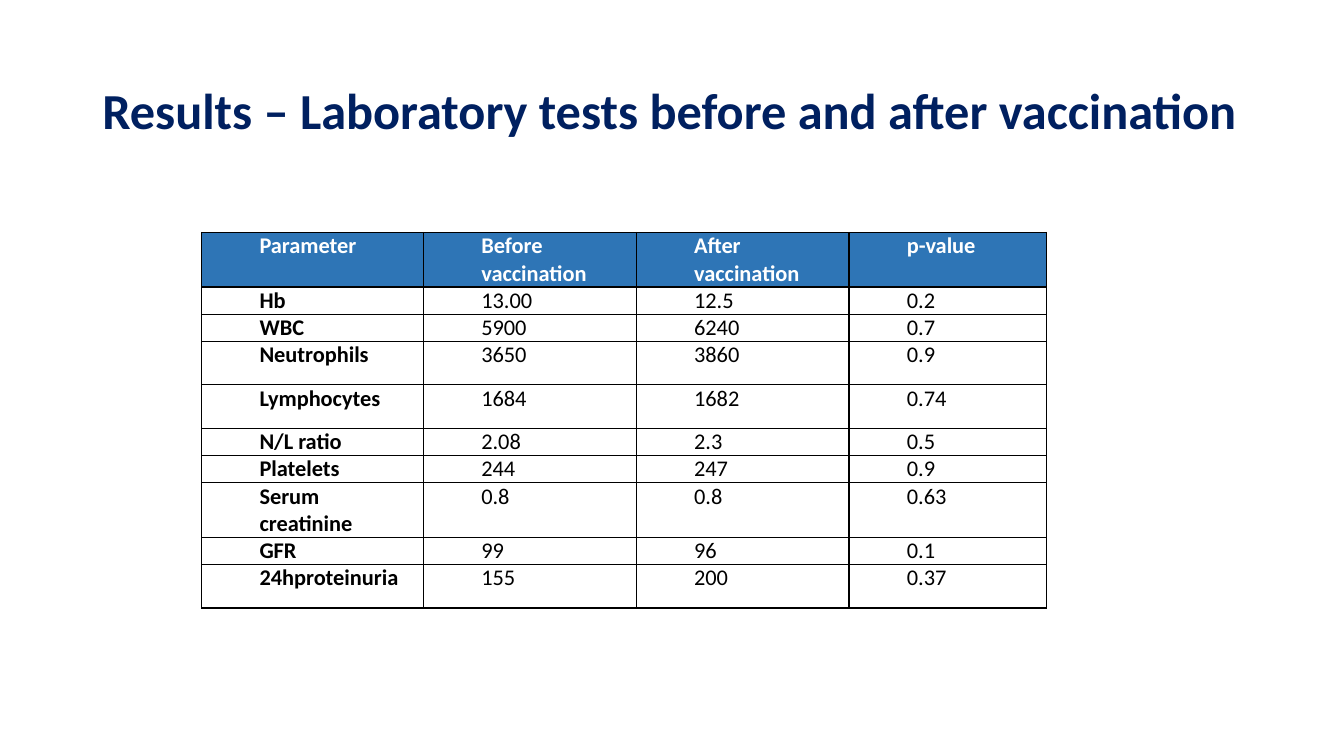
from lxml.etree import SubElement
from pptx import Presentation
from pptx.dml.color import RGBColor
from pptx.enum.text import MSO_ANCHOR
from pptx.oxml.ns import qn
from pptx.util import Pt

NAVY = RGBColor(0x00, 0x20, 0x60)
BLUE = RGBColor(0x2E, 0x75, 0xB6)
WHITE = RGBColor(0xFF, 0xFF, 0xFF)
BLACK = RGBColor(0x00, 0x00, 0x00)

COLUMNS = [158.4, 152, 152, 141]
SINGLE, SPACED, DOUBLE = 19.5, 31, 39  # row heights

# Each row: height, then its cells
ROWS = [
    (DOUBLE, "Parameter", "Before vaccination", "After vaccination", "p-value"),
    (SINGLE, "Hb", "13.00", "12.5", "0.2"),
    (SINGLE, "WBC", "5900", "6240", "0.7"),
    (SPACED, "Neutrophils", "3650", "3860", "0.9"),
    (SPACED, "Lymphocytes", "1684", "1682", "0.74"),
    (SINGLE, "N/L ratio", "2.08", "2.3", "0.5"),
    (SINGLE, "Platelets", "244", "247", "0.9"),
    (DOUBLE, "Serum creatinine", "0.8", "0.8", "0.63"),
    (SINGLE, "GFR", "99", "96", "0.1"),
    (SPACED, "24hproteinuria", "155", "200", "0.37"),
]


class SlideBuilder:
    font = "Calibri"
    title_size = 36
    table_size = 16

    def __init__(self, s):
        self.s = s

    def format_runs(self, p, size, color, bold):
        for r in p.runs:
            r.font.name = self.font
            r.font.size = Pt(size)
            r.font.bold = bold
            r.font.color.rgb = color

    def title(self, text, left, top, width, height):
        tf = self.s.shapes.add_textbox(Pt(left), Pt(top), Pt(width), Pt(height)).text_frame
        tf.word_wrap = True
        tf.vertical_anchor = MSO_ANCHOR.MIDDLE
        tf.text = text
        p = tf.paragraphs[0]
        p.line_spacing = 0.9
        self.format_runs(p, self.title_size, NAVY, True)

    def borders(self, cell):
        tc_pr = cell._tc.get_or_add_tcPr()
        for side in ("a:lnL", "a:lnR", "a:lnT", "a:lnB"):
            ln = SubElement(tc_pr, qn(side), w=str(Pt(1)))
            fill = SubElement(ln, qn("a:solidFill"))
            SubElement(fill, qn("a:srgbClr"), val=str(BLACK))

    def cell(self, cell, text, header, bold):
        cell.margin_left = cell.margin_right = Pt(5.4)
        cell.margin_top = cell.margin_bottom = Pt(0)
        self.borders(cell)
        if header:
            cell.fill.solid()
            cell.fill.fore_color.rgb = BLUE
        else:
            cell.fill.background()
        cell.text_frame.text = text
        p = cell.text_frame.paragraphs[0]
        p_pr = p._p.get_or_add_pPr()
        p_pr.set("marL", str(Pt(36)))
        p_pr.set("indent", "0")
        self.format_runs(p, self.table_size, WHITE if header else BLACK, bold)

    def table(self, rows, columns, left, top):
        height = sum(row[0] for row in rows)
        table = self.s.shapes.add_table(
            len(rows), len(columns), Pt(left), Pt(top), Pt(sum(columns)), Pt(height)).table
        table.horz_banding = False
        for column, width in zip(table.columns, columns):
            column.width = Pt(width)
        for i, (row_height, *texts) in enumerate(rows):
            table.rows[i].height = Pt(row_height)
            for j, text in enumerate(texts):
                self.cell(table.cell(i, j), text, i == 0, i == 0 or j == 0)


def main():
    prs = Presentation()
    prs.slide_width, prs.slide_height = Pt(960), Pt(540)
    builder = SlideBuilder(prs.slides.add_slide(prs.slide_layouts[6]))

    # Title
    builder.title("Results – Laboratory tests before and after vaccination", 66, 28.8, 828, 104.4)

    # Laboratory results
    builder.table(ROWS, COLUMNS, 144, 166)

    prs.save("out.pptx")


if __name__ == "__main__":
    main()
